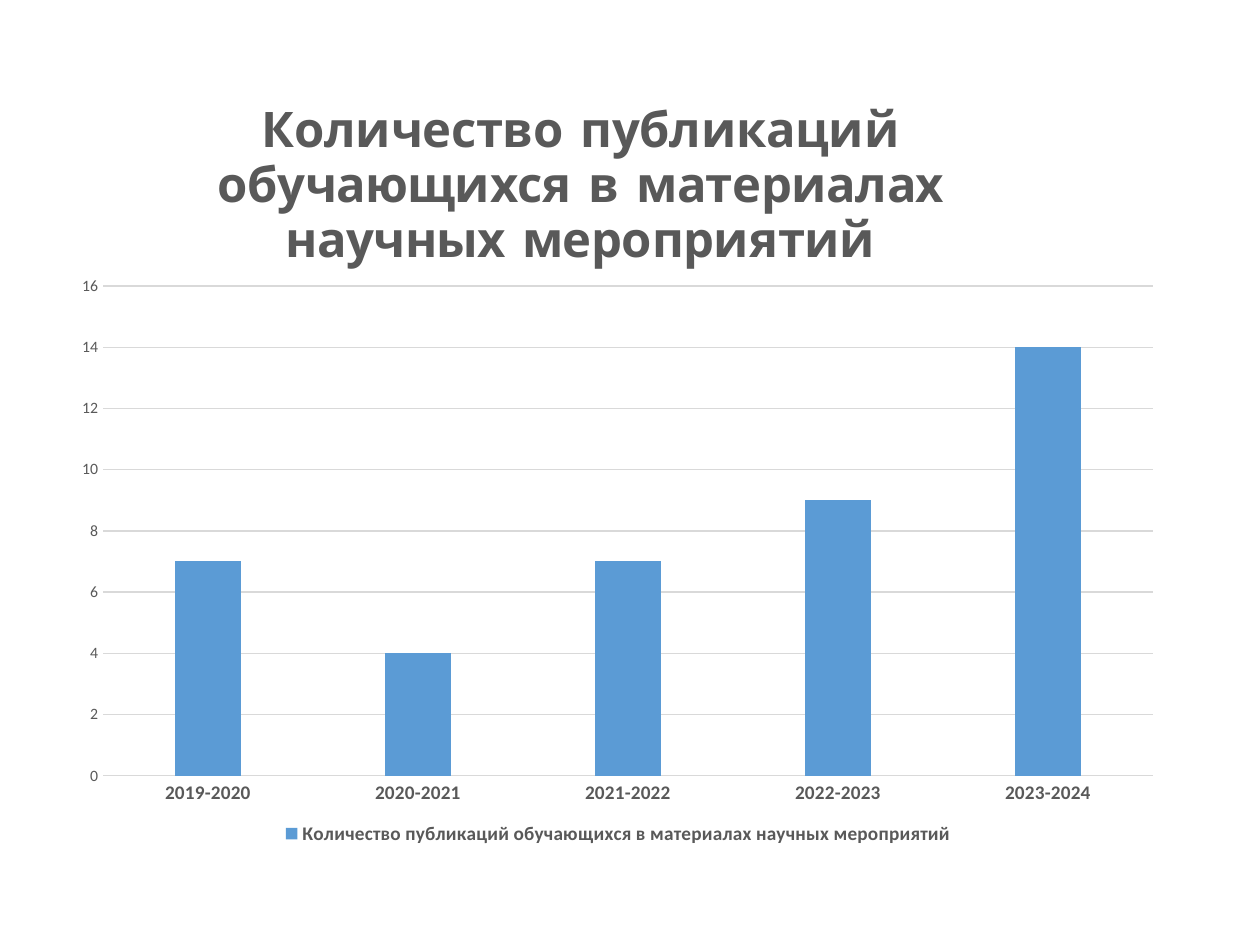
from lxml import etree
from pptx import Presentation
from pptx.chart.data import CategoryChartData
from pptx.dml.color import RGBColor
from pptx.enum.chart import XL_CHART_TYPE, XL_LEGEND_POSITION, XL_TICK_MARK
from pptx.oxml.ns import qn
from pptx.util import Inches, Pt

COLUMNS = XL_CHART_TYPE.COLUMN_CLUSTERED
BOTTOM = XL_LEGEND_POSITION.BOTTOM
NO_TICK = XL_TICK_MARK.NONE

BLUE = RGBColor(0x5B, 0x9B, 0xD5)
GRAY = RGBColor(0x59, 0x59, 0x59)
LIGHT = RGBColor(0xD9, 0xD9, 0xD9)

WIDTH, HEIGHT = Inches(10), Inches(7.5)
TITLE = "Количество публикаций обучающихся в материалах научных мероприятий"
FIRST_YEAR = 2019
PUBLICATIONS = [7, 4, 7, 9, 14]


def set_font(font, size, bold=False, name="Calibri"):
    font.size = Pt(size)
    font.bold = bold
    font.name = name
    font.color.rgb = GRAY


def set_line(line):
    line.color.rgb = LIGHT
    line.width = Pt(0.75)


def set_layout(parent, after, **settings):
    """Place a chart part by shares of the chart's size."""
    for old in parent.findall(qn("c:layout")):
        parent.remove(old)
    layout = etree.Element(qn("c:layout"))
    manual = etree.SubElement(layout, qn("c:manualLayout"))
    for tag, value in settings.items():
        etree.SubElement(manual, qn(f"c:{tag}")).set("val", str(value))
    if after is None:
        parent.insert(0, layout)
    else:
        after.addnext(layout)


def add_chart(s):
    data = CategoryChartData()
    data.categories = [f"{FIRST_YEAR + i}-{FIRST_YEAR + i + 1}"
                       for i in range(len(PUBLICATIONS))]
    data.add_series(TITLE, PUBLICATIONS)
    frame = s.shapes.add_chart(COLUMNS, Inches(0.51), Inches(0.52),
                               Inches(8.8), Inches(6.23), data)
    return frame.chart


def format_title(chart):
    chart.has_title = True
    title = chart.chart_title
    p = title.text_frame.paragraphs[0]
    p.text = TITLE
    set_font(p.font, 28, True, "Comic Neue")
    title.include_in_layout = False
    element = title._element
    set_layout(element, element.find(qn("c:tx")),
               xMode="edge", yMode="edge", x=0.13, y=0.03)


def format_plot(chart):
    plot = chart.plots[0]
    plot.gap_width = 219
    plot.overlap = -27
    plot.vary_by_categories = False
    fill = plot.series[0].format.fill
    fill.solid()
    fill.fore_color.rgb = BLUE
    set_layout(chart._chartSpace.chart.plotArea, None, layoutTarget="inner",
               xMode="edge", yMode="edge", x=0.035, y=0.281, w=0.947, h=0.624)


def format_axes(chart):
    for axis in (chart.category_axis, chart.value_axis):
        axis.major_tick_mark = axis.minor_tick_mark = NO_TICK
    set_font(chart.category_axis.tick_labels.font, 11, True)
    set_line(chart.category_axis.format.line)
    values = chart.value_axis
    set_font(values.tick_labels.font, 9)
    values.minimum_scale, values.maximum_scale, values.major_unit = 0, 16, 2
    values.format.line.fill.background()
    set_line(values.major_gridlines.format.line)


def format_legend(chart):
    chart.has_legend = True
    chart.legend.position = BOTTOM
    chart.legend.include_in_layout = False
    set_font(chart.legend.font, 11, True)


def main():
    prs = Presentation()
    prs.slide_width, prs.slide_height = WIDTH, HEIGHT
    s = prs.slides.add_slide(prs.slide_layouts[6])
    chart = add_chart(s)
    set_font(chart.font, 10)
    format_title(chart)
    format_plot(chart)
    format_axes(chart)
    format_legend(chart)
    prs.save("out.pptx")


if __name__ == "__main__":
    main()
